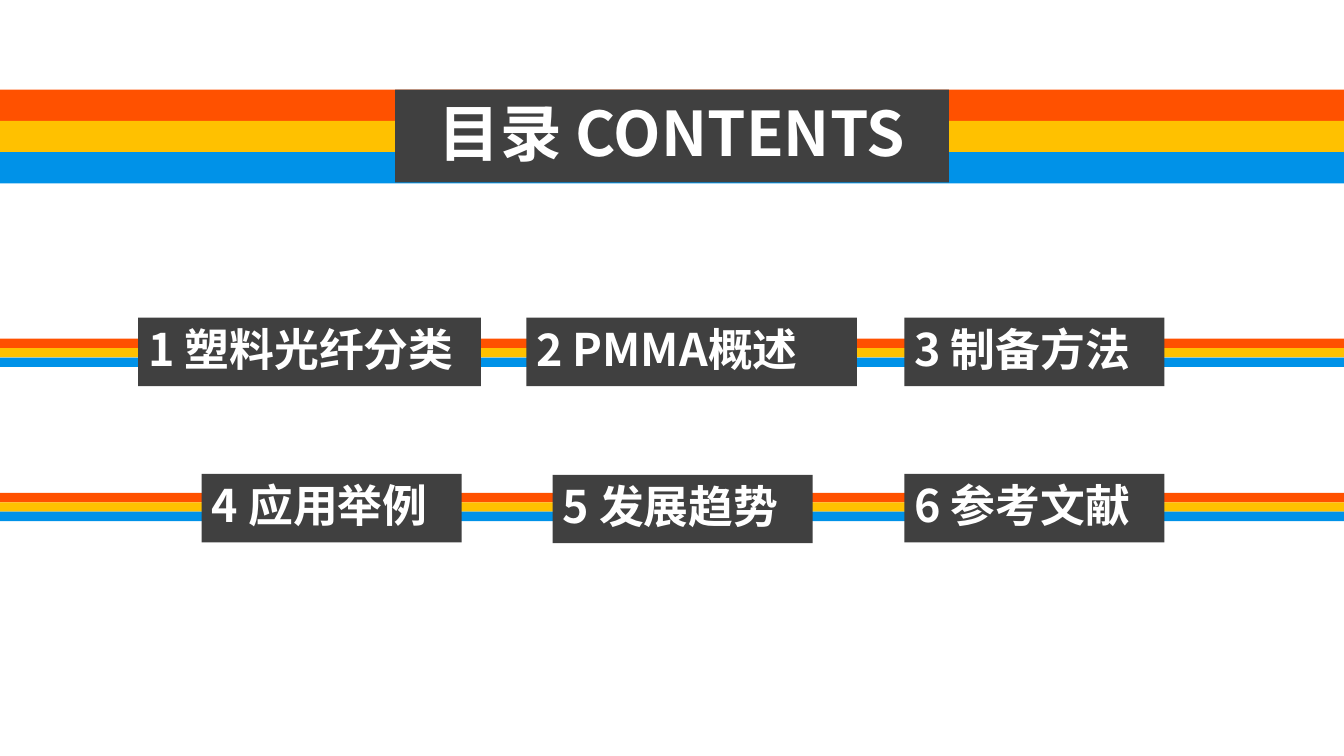
from dataclasses import dataclass

from lxml.etree import SubElement
from pptx import Presentation
from pptx.dml.color import RGBColor
from pptx.enum.shapes import MSO_SHAPE
from pptx.enum.text import MSO_ANCHOR, MSO_AUTO_SIZE, PP_ALIGN
from pptx.oxml.ns import qn
from pptx.shapes.autoshape import Shape
from pptx.slide import Slide
from pptx.util import Inches, Pt

SLIDE_WIDTH = 13.33
FONT = "Noto Sans CJK SC"
STRIPE_COLOURS = ("FF5100", "FFC100", "0092E8")
LABEL_HEIGHT = 0.68


@dataclass(frozen=True)
class Band:
    top: float
    height: float


@dataclass(frozen=True)
class Label:
    words: str
    left: float
    top: float
    width: float


BANDS = (Band(0.89, 0.93), Band(3.36, 0.28), Band(4.89, 0.28))
LABELS = (
    Label("1 塑料光纤分类", 1.37, 3.15, 3.4),
    Label("2 PMMA概述", 5.22, 3.15, 3.28),
    Label("3 制备方法", 8.97, 3.15, 2.58),
    Label("4 应用举例", 2, 4.7, 2.58),
    Label("5 发展趋势", 5.48, 4.71, 2.58),
    Label("6 参考文献", 8.97, 4.7, 2.58),
)


def paint(shape: Shape, colour: str) -> None:
    shape.fill.solid()
    shape.fill.fore_color.rgb = RGBColor.from_string(colour)
    shape.line.fill.background()


def add_block(slide: Slide, left: float, top: float, width: float,
              height: float, colour: str) -> Shape:
    block = slide.shapes.add_shape(
        MSO_SHAPE.RECTANGLE, Inches(left), Inches(top), Inches(width), Inches(height))
    block.shadow.inherit = False
    paint(block, colour)
    return block


def add_band(slide: Slide, band: Band) -> None:
    stripe_height = band.height / len(STRIPE_COLOURS)
    for row, colour in enumerate(STRIPE_COLOURS):
        add_block(slide, 0, band.top + row * stripe_height,
                  SLIDE_WIDTH, stripe_height, colour)


def write(shape: Shape, words: str, size: int, align: PP_ALIGN) -> None:
    frame = shape.text_frame
    frame.text = words
    frame.word_wrap = True
    frame.auto_size = MSO_AUTO_SIZE.NONE
    frame.vertical_anchor = MSO_ANCHOR.MIDDLE
    paragraph = frame.paragraphs[0]
    paragraph.alignment = align
    paragraph.line_spacing = 0.9
    paragraph.space_before = Pt(0)
    run = paragraph.runs[0]
    run.font.size = Pt(size)
    run.font.bold = True
    run.font.name = FONT
    run.font.color.rgb = RGBColor.from_string("FFFFFF")
    SubElement(run._r.get_or_add_rPr(), qn("a:ea"), typeface=FONT)


def add_heading(slide: Slide) -> None:
    heading = slide.shapes.title
    heading.left, heading.top = Inches(3.92), Inches(0.89)
    heading.width, heading.height = Inches(5.49), Inches(0.92)
    paint(heading, "404040")
    write(heading, "目录 CONTENTS", 44, PP_ALIGN.CENTER)
    slide.shapes._spTree.append(heading._element)


def add_label(slide: Slide, label: Label) -> None:
    block = add_block(slide, label.left, label.top, label.width, LABEL_HEIGHT, "404040")
    write(block, label.words, 32, PP_ALIGN.LEFT)


def main() -> None:
    deck = Presentation()
    deck.slide_width, deck.slide_height = Inches(SLIDE_WIDTH), Inches(7.5)
    slide = deck.slides.add_slide(deck.slide_layouts[5])
    for band in BANDS:
        add_band(slide, band)
    add_heading(slide)
    for label in LABELS:
        add_label(slide, label)
    deck.save("out.pptx")


if __name__ == "__main__":
    main()
